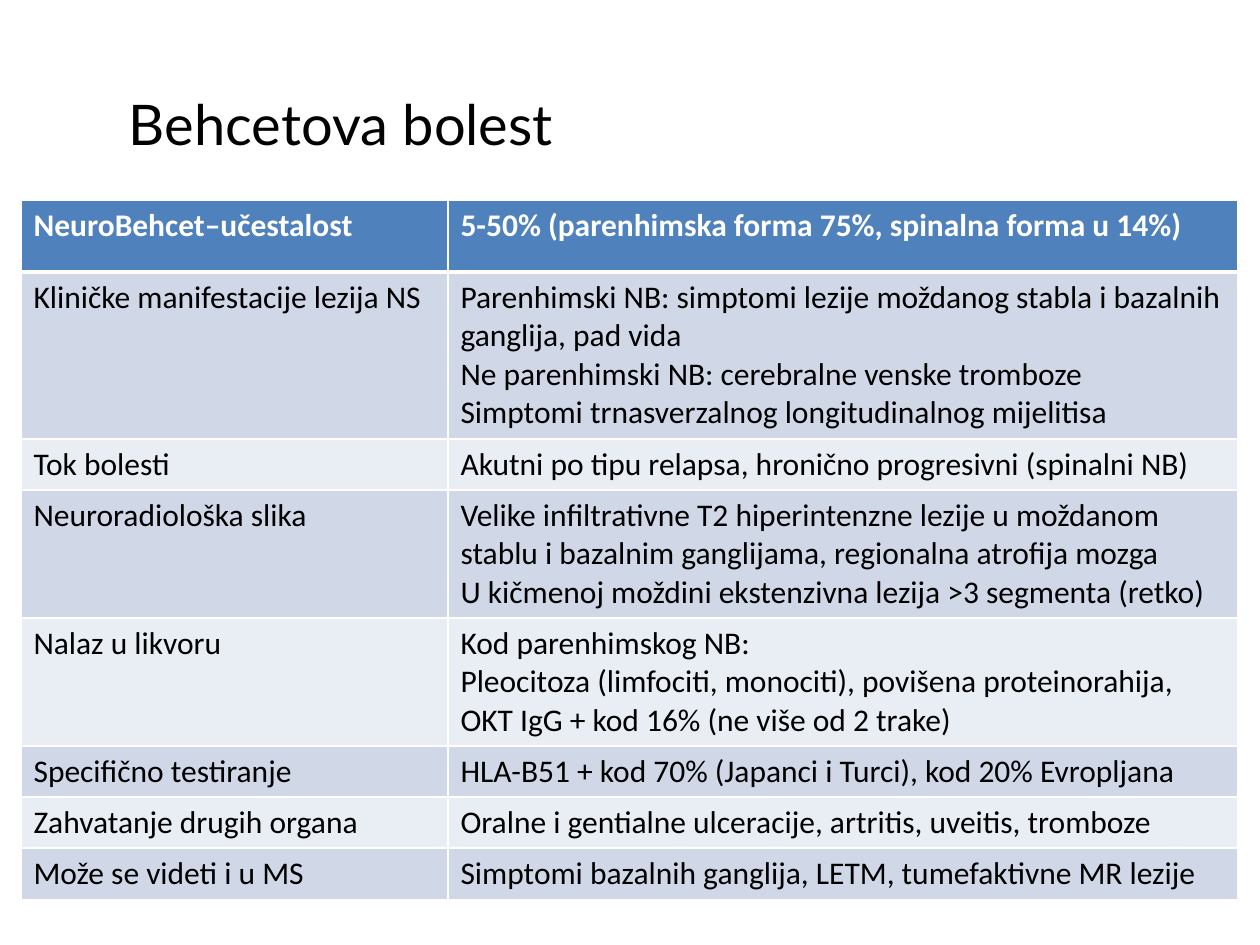
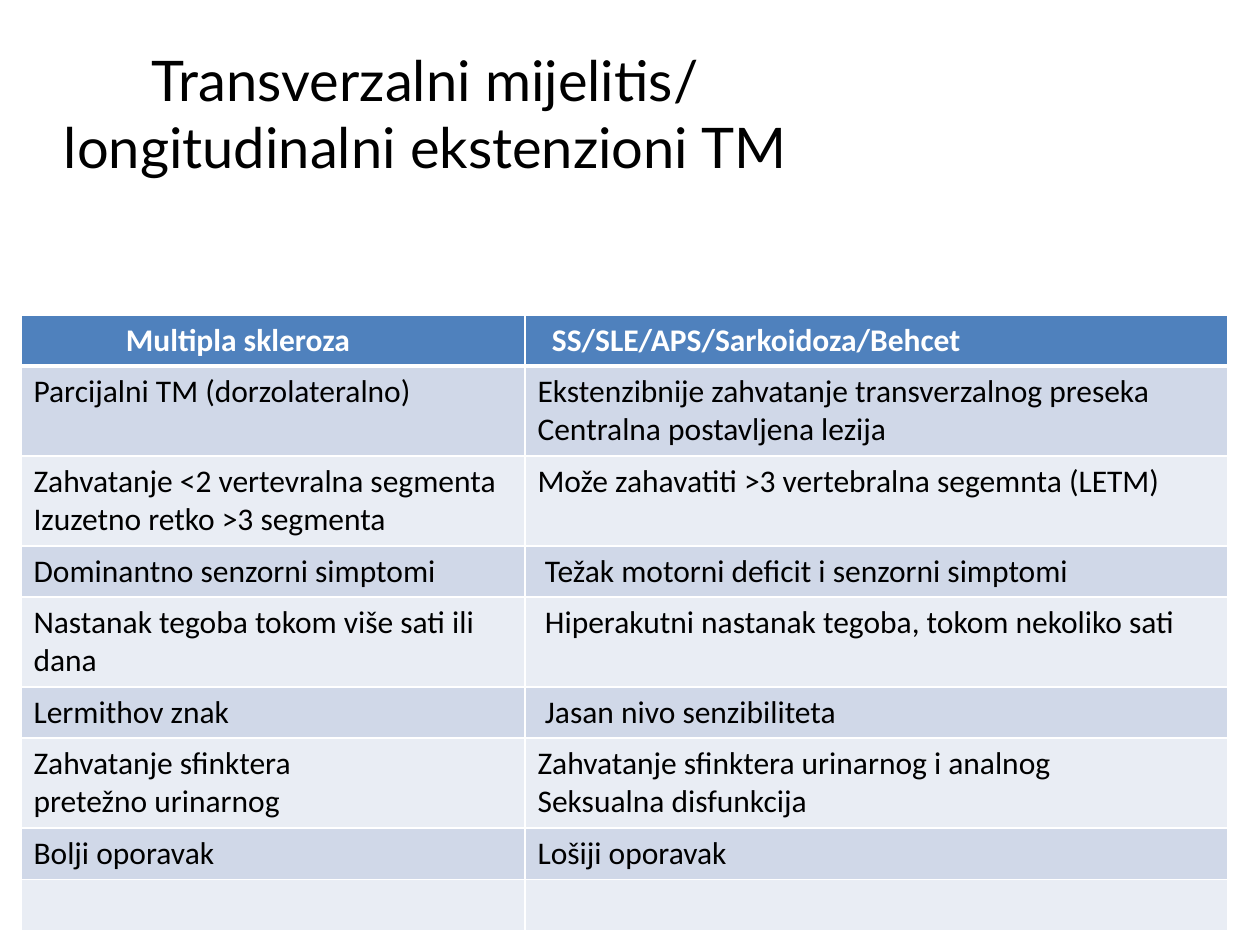
from lxml.etree import SubElement
from pptx import Presentation
from pptx.dml.color import RGBColor
from pptx.enum.text import MSO_ANCHOR, MSO_AUTO_SIZE, PP_ALIGN
from pptx.oxml.ns import qn
from pptx.util import Emu, Pt

PX_PER_INCH = 126
COLOURS = {
    "header": "4F81BD",
    "odd_row": "D0D8E8",
    "even_row": "E9EDF4",
    "border": "FFFFFF",
    "header_text": "FFFFFF",
    "text": "000000",
}
TITLE_FORMAT = {"size": 32, "font": "Lato", "align": PP_ALIGN.CENTER}
THIN, THICK = 1, 3

BEHCET_ROWS = [
    (72, "NeuroBehcet–učestalost",
     "5-50% (parenhimska forma 75%, spinalna forma u 14%)"),
    (167, "Kliničke manifestacije lezija NS",
     "Parenhimski NB: simptomi lezije moždanog stabla i bazalnih ganglija, pad vida\n"
     "Ne parenhimski NB: cerebralne venske tromboze\n"
     "Simptomi trnasverzalnog longitudinalnog mijelitisa"),
    (51, "Tok bolesti", "Akutni po tipu relapsa, hronično progresivni (spinalni NB)"),
    (128, "Neuroradiološka slika",
     "Velike infiltrativne T2 hiperintenzne lezije u moždanom stablu i bazalnim "
     "ganglijama, regionalna atrofija mozga\n"
     "U kičmenoj moždini ekstenzivna lezija >3 segmenta (retko)"),
    (128, "Nalaz u likvoru",
     "Kod parenhimskog NB:\n"
     "Pleocitoza (limfociti, monociti), povišena proteinorahija,\n"
     "OKT IgG + kod 16% (ne više od 2 trake)"),
    (51, "Specifično testiranje",
     "HLA-B51 + kod 70% (Japanci i Turci), kod 20% Evropljana"),
    (51, "Zahvatanje drugih organa",
     "Oralne i gentialne ulceracije, artritis, uveitis, tromboze"),
    (51, "Može se videti i u MS",
     "Simptomi bazalnih ganglija, LETM, tumefaktivne MR lezije"),
]

MYELITIS_ROWS = [
    (51, "Multipla skleroza", "SS/SLE/APS/Sarkoidoza/Behcet"),
    (90, "Parcijalni TM (dorzolateralno)",
     "Ekstenzibnije zahvatanje transverzalnog preseka\nCentralna postavljena lezija"),
    (90, "Zahvatanje <2 vertevralna segmenta\nIzuzetno retko >3 segmenta",
     "Može zahavatiti >3 vertebralna segemnta (LETM)"),
    (51, "Dominantno senzorni simptomi", "Težak motorni deficit i senzorni simptomi"),
    (90, "Nastanak tegoba tokom više sati ili dana",
     "Hiperakutni nastanak tegoba, tokom nekoliko sati"),
    (51, "Lermithov znak", "Jasan nivo senzibiliteta"),
    (90, "Zahvatanje sfinktera\npretežno urinarnog",
     "Zahvatanje sfinktera urinarnog i analnog\nSeksualna disfunkcija"),
    (51, "Bolji oporavak", "Lošiji oporavak"),
    (51, "", ""),
]
MYELITIS_MARGINS = {(0, 0): 105, (0, 1): 27, (3, 1): 20, (4, 1): 20, (5, 1): 20}


def px(length):
    """Turn pixels into EMU."""
    return Emu(round(length * 914400 / PX_PER_INCH))


def write_text(frame, text, *, size=18, font="Calibri", colour="text", bold=False,
               align=PP_ALIGN.LEFT):
    """Write newline-separated paragraphs in one format."""
    for index, line in enumerate(text.split("\n")):
        paragraph = frame.add_paragraph() if index else frame.paragraphs[0]
        paragraph.text = line
        paragraph.alignment = align
        for run in paragraph.runs:
            run.font.size = Pt(size)
            run.font.name = font
            run.font.bold = bold
            run.font.color.rgb = RGBColor.from_string(COLOURS[colour])


def add_titled_slide(presentation, title, left, top, width, height):
    """Add a title-only slide and place its title."""
    slide = presentation.slides.add_slide(presentation.slide_layouts[5])
    shape = slide.shapes.title
    shape.left, shape.top, shape.width, shape.height = map(px, (left, top, width, height))
    frame = shape.text_frame
    frame.word_wrap = True
    frame.auto_size = MSO_AUTO_SIZE.NONE
    frame.vertical_anchor = MSO_ANCHOR.MIDDLE
    write_text(frame, title, **TITLE_FORMAT)
    return slide


def set_borders(cell, top, bottom):
    """Draw the four borders of a cell, with widths in points."""
    properties = cell._tc.get_or_add_tcPr()
    for tag, width in (("lnL", THIN), ("lnR", THIN), ("lnT", top), ("lnB", bottom)):
        line = SubElement(properties, qn(f"a:{tag}"), w=str(Pt(width)))
        fill = SubElement(line, qn("a:solidFill"))
        SubElement(fill, qn("a:srgbClr"), val=COLOURS["border"])


def add_banded_table(slide, rows, left, top, column_widths, margins=None):
    """Add a table with a header row and alternating bands."""
    margins = margins or {}
    height = sum(row[0] for row in rows)
    frame = slide.shapes.add_table(len(rows), len(column_widths), px(left), px(top),
                                   px(sum(column_widths)), px(height))
    table = frame.table
    for column, width in zip(table.columns, column_widths):
        column.width = px(width)
    for row_index, (row_height, *texts) in enumerate(rows):
        table.rows[row_index].height = px(row_height)
        header = row_index == 0
        band = "header" if header else ("even_row", "odd_row")[row_index % 2]
        for column_index, text in enumerate(texts):
            cell = table.cell(row_index, column_index)
            set_borders(cell, THICK if row_index == 1 else THIN, THICK if header else THIN)
            cell.fill.solid()
            cell.fill.fore_color.rgb = RGBColor.from_string(COLOURS[band])
            if (row_index, column_index) in margins:
                cell.margin_left = px(margins[row_index, column_index])
            write_text(cell.text_frame, text, bold=header,
                       colour="header_text" if header else "text")


def main():
    """Build the two table slides."""
    presentation = Presentation()
    presentation.slide_width, presentation.slide_height = px(1260), px(945)

    slide = add_titled_slide(presentation, "Behcetova bolest", 10, 32, 662, 183)
    add_banded_table(slide, BEHCET_ROWS, 21, 200, (427, 790))

    slide = add_titled_slide(presentation,
                             "Transverzalni mijelitis/\vlongitudinalni ekstenzioni TM",
                             21, 21, 809, 183)
    add_banded_table(slide, MYELITIS_ROWS, 21, 315, (504, 703), MYELITIS_MARGINS)

    presentation.save("out.pptx")


if __name__ == "__main__":
    main()
